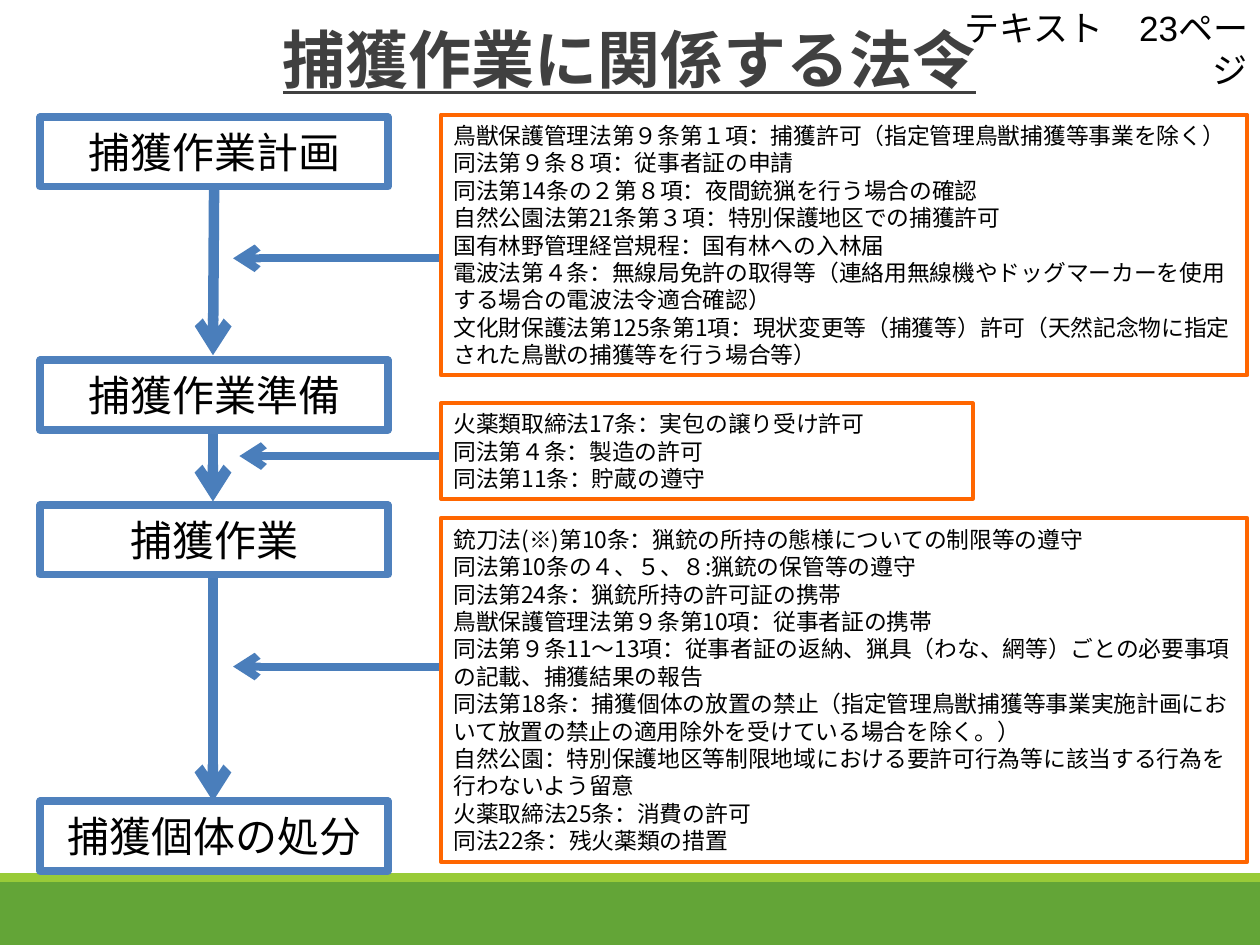
from typing import NamedTuple

from lxml import etree
from pptx import Presentation
from pptx.dml.color import RGBColor
from pptx.enum import shapes, text
from pptx.oxml import ns
from pptx.util import Pt

BLACK = RGBColor(0x00, 0x00, 0x00)
WHITE = RGBColor(0xFF, 0xFF, 0xFF)
TITLE_GREY = RGBColor(0x40, 0x40, 0x40)
STEP_BLUE = RGBColor(0x4F, 0x81, 0xBD)
ARROW_BLUE = RGBColor(0x4A, 0x7E, 0xBB)
LAW_ORANGE = RGBColor(0xFF, 0x66, 0x00)
BAND_GREEN = RGBColor(0x63, 0xA5, 0x37)
STRIPE_GREEN = RGBColor(0x99, 0xCB, 0x38)

JAPANESE = "Noto Sans CJK JP"
LEFT, CENTER, RIGHT = text.PP_ALIGN.LEFT, text.PP_ALIGN.CENTER, text.PP_ALIGN.RIGHT

STEP_LEFT, STEP_WIDTH, STEP_HEIGHT = 23, 198.7, 39.6
LAW_LEFT = 252


class Step(NamedTuple):
    label: str
    top: float


class Arrow(NamedTuple):
    x1: float
    y1: float
    x2: float
    y2: float
    weight: float


class LawBox(NamedTuple):
    top: float
    width: float
    height: float
    provisions: list[str]


STEPS = [
    Step("捕獲作業計画", 67),
    Step("捕獲作業準備", 205.9),
    Step("捕獲作業", 288.7),
    Step("捕獲個体の処分", 457.9),
]

ARROWS = [
    # From step to step
    Arrow(122.4, 98, 121.7, 203, 6),
    Arrow(121.7, 230.4, 121.7, 286.6, 6),
    Arrow(121.7, 306, 121.7, 457.9, 6),
    # From laws to the flow
    Arrow(315.4, 147.6, 133.2, 147.6, 4.5),
    Arrow(318.2, 260.6, 136.8, 260.6, 4.5),
    Arrow(319.7, 380.9, 133.2, 380.9, 4.5),
]

LAW_BOXES = [
    LawBox(65.5, 460.8, 149, [
        "鳥獣保護管理法第９条第１項：捕獲許可（指定管理鳥獣捕獲等事業を除く）",
        "同法第９条８項：従事者証の申請",
        "同法第14条の２第８項：夜間銃猟を行う場合の確認",
        "自然公園法第21条第３項：特別保護地区での捕獲許可",
        "国有林野管理経営規程：国有林への入林届",
        "電波法第４条：無線局免許の取得等（連絡用無線機やドッグマーカーを使用する場合の電波法令適合確認）",
        "文化財保護法第125条第1項：現状変更等（捕獲等）許可（天然記念物に指定された鳥獣の捕獲等を行う場合等）",
    ]),
    LawBox(230.4, 303.8, 54.7, [
        "火薬類取締法17条：実包の譲り受け許可",
        "同法第４条：製造の許可",
        "同法第11条：貯蔵の遵守",
    ]),
    LawBox(295.9, 460.8, 196.6, [
        "銃刀法(※)第10条：猟銃の所持の態様についての制限等の遵守",
        "同法第10条の４、５、８:猟銃の保管等の遵守",
        "同法第24条：猟銃所持の許可証の携帯",
        "鳥獣保護管理法第９条第10項：従事者証の携帯",
        "同法第９条11～13項：従事者証の返納、猟具（わな、網等）ごとの必要事項の記載、捕獲結果の報告",
        "同法第18条：捕獲個体の放置の禁止（指定管理鳥獣捕獲等事業実施計画において放置の禁止の適用除外を受けている場合を除く。）",
        "自然公園：特別保護地区等制限地域における要許可行為等に該当する行為を行わないよう留意",
        "火薬取締法25条：消費の許可",
        "同法22条：残火薬類の措置",
    ]),
]


def write(frame, lines: list[str], size: float, align, color: RGBColor = BLACK,
          latin: str = JAPANESE, spacing=None, anchor=text.MSO_ANCHOR.MIDDLE) -> None:
    """Fill a text frame with one paragraph per line."""
    frame.word_wrap = True
    frame.auto_size = text.MSO_AUTO_SIZE.NONE
    frame.vertical_anchor = anchor
    for index, line in enumerate(lines):
        paragraph = frame.add_paragraph() if index else frame.paragraphs[0]
        paragraph.alignment = align
        if spacing is not None:
            paragraph.line_spacing = spacing
        run = paragraph.add_run()
        run.text = line
        run.font.size = Pt(size)
        run.font.name = latin
        run.font.color.rgb = color
        east_asian = etree.SubElement(run.font._element, ns.qn("a:ea"))
        east_asian.set("typeface", JAPANESE)


def add_box(slide, left: float, top: float, width: float, height: float,
            fill: RGBColor, border: RGBColor | None = None, weight: float = 0):
    box = slide.shapes.add_shape(shapes.MSO_SHAPE.RECTANGLE,
                                 Pt(left), Pt(top), Pt(width), Pt(height))
    box.shadow.inherit = False
    box.fill.solid()
    box.fill.fore_color.rgb = fill
    if border is None:
        box.line.fill.background()
    else:
        box.line.color.rgb = border
        box.line.width = Pt(weight)
    return box


def add_arrow(slide, arrow: Arrow) -> None:
    connector = slide.shapes.add_connector(
        shapes.MSO_CONNECTOR.STRAIGHT,
        Pt(arrow.x1), Pt(arrow.y1), Pt(arrow.x2), Pt(arrow.y2))
    connector.line.color.rgb = ARROW_BLUE
    connector.line.width = Pt(arrow.weight)
    tip = etree.SubElement(connector.line._get_or_add_ln(), ns.qn("a:tailEnd"))
    tip.set("type", "arrow")
    etree.SubElement(connector._element.spPr, ns.qn("a:effectLst"))


def add_step(slide, step: Step) -> None:
    box = add_box(slide, STEP_LEFT, step.top, STEP_WIDTH, STEP_HEIGHT, WHITE, STEP_BLUE, 4.5)
    write(box.text_frame, [step.label], 24, CENTER)


def add_law_box(slide, law: LawBox) -> None:
    box = add_box(slide, LAW_LEFT, law.top, law.width, law.height, WHITE, LAW_ORANGE, 2.25)
    write(box.text_frame, law.provisions, 13, LEFT, spacing=Pt(15.65))


def add_title(slide) -> None:
    title = slide.shapes.title
    title.left, title.top, title.width, title.height = Pt(115.2), Pt(15.1), Pt(488.9), Pt(41.8)
    write(title.text_frame, ["捕獲作業に関係する法令"], 36, CENTER, TITLE_GREY, spacing=0.9)
    font = title.text_frame.paragraphs[0].runs[0].font
    font.bold = True
    font.underline = True


def main() -> None:
    deck = Presentation()
    deck.slide_width, deck.slide_height = Pt(720), Pt(540)
    slide = deck.slides.add_slide(deck.slide_layouts[5])

    # Green footer band
    add_box(slide, 0, 504, 720, 36, BAND_GREEN)
    add_box(slide, 0, 499, 720, 5, STRIPE_GREEN)

    add_title(slide)

    # Work flow and the laws that apply to it
    for arrow in ARROWS:
        add_arrow(slide, arrow)
    for step in STEPS:
        add_step(slide, step)
    for law in LAW_BOXES:
        add_law_box(slide, law)

    # Textbook page reference
    page_note = slide.shapes.add_textbox(Pt(537.1), Pt(0), Pt(182.9), Pt(31.7))
    write(page_note.text_frame, ["テキスト　23ページ"], 20, RIGHT, latin="Arial",
          spacing=Pt(24), anchor=text.MSO_ANCHOR.TOP)

    deck.save("out.pptx")


if __name__ == "__main__":
    main()
